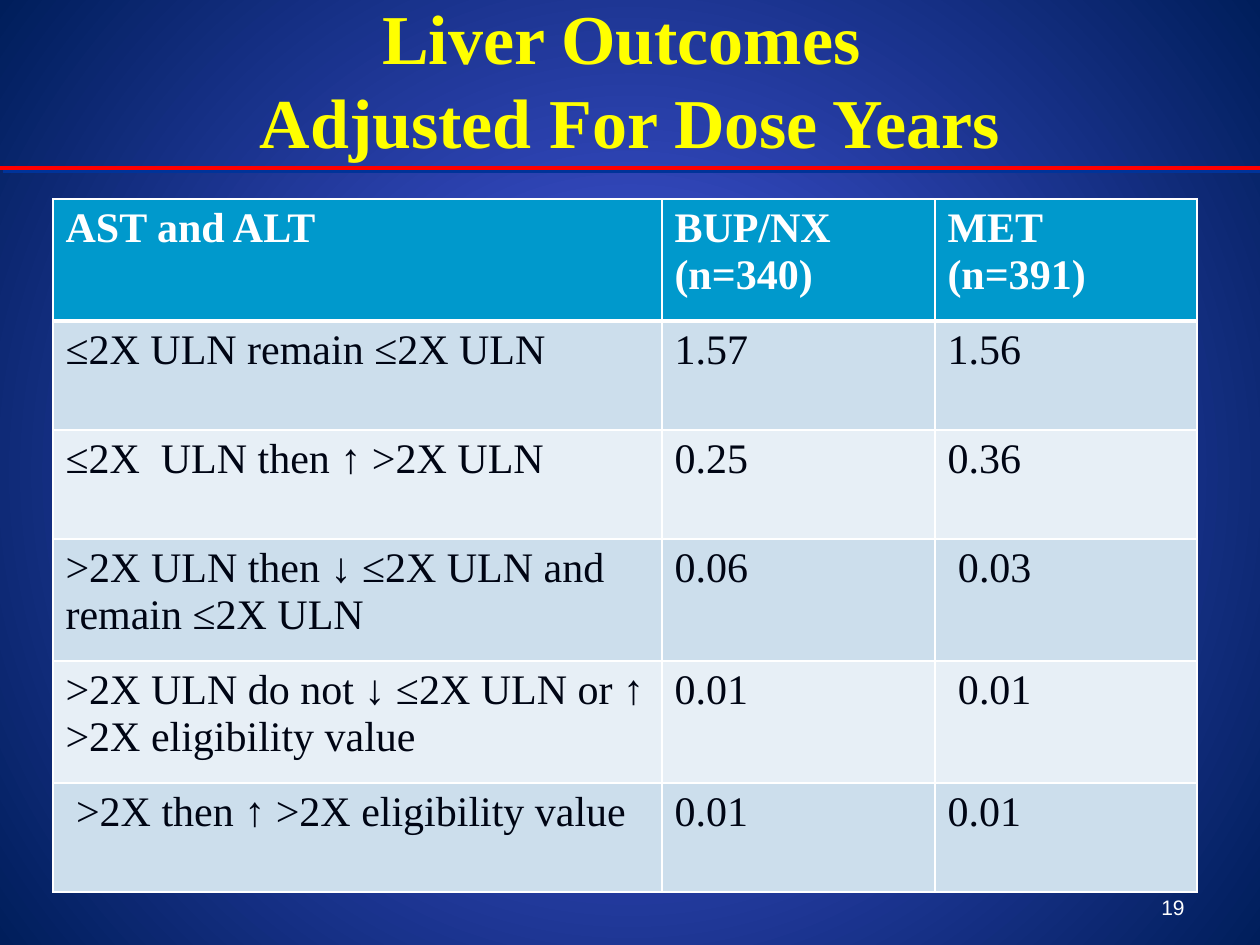
from dataclasses import dataclass

from lxml.etree import SubElement
from pptx import Presentation
from pptx.dml.color import RGBColor as Rgb
from pptx.enum.shapes import MSO_CONNECTOR as Connector
from pptx.enum.text import MSO_ANCHOR as Anchor, MSO_AUTO_SIZE as AutoSize, PP_ALIGN as Align
from pptx.oxml import parse_xml
from pptx.oxml.ns import nsdecls, qn
from pptx.util import Emu, Pt

EMU_PER_PX = 914400 / 126


@dataclass(frozen=True)
class Theme:
    serif: str = "Times New Roman"
    sans: str = "Arial"
    glow: str = "4A5AE9"
    edge: str = "001E5B"
    title: str = "FFFF00"
    white: str = "FFFFFF"
    ink: str = "000514"
    header: str = "0099CC"
    bands: tuple = ("CCDEEC", "E7EFF6")
    rule: str = "FF0000"
    rule_shadow: str = "003399"
    title_size: int = 40
    table_size: int = 24
    number_size: int = 12


THEME = Theme()

OUTCOMES = [
    ("AST and ALT", "BUP/NX (n=340)", "MET (n=391)"),
    ("≤2X ULN remain ≤2X ULN", "1.57", "1.56"),
    ("≤2X  ULN then ↑ >2X ULN", "0.25", "0.36"),
    (">2X ULN then ↓ ≤2X ULN and remain ≤2X ULN", "0.06", " 0.03"),
    (">2X ULN do not ↓ ≤2X ULN or ↑ >2X eligibility value", "0.01", " 0.01"),
    (" >2X then ↑ >2X eligibility value", "0.01", "0.01"),
]
COLUMN_WIDTHS = (609, 273, 262)
ROW_HEIGHTS = (122, 109, 109, 122, 122, 109)


def px(length):
    return Emu(round(length * EMU_PER_PX))


def box(*lengths):
    return [px(length) for length in lengths]


def format_text(frame, font, size, color, bold=False, align=Align.LEFT):
    for paragraph in frame.paragraphs:
        paragraph.alignment = align
        for run in paragraph.runs:
            run.font.name = font
            run.font.size = Pt(size)
            run.font.bold = bold
            run.font.color.rgb = Rgb.from_string(color)


def paint_background(slide):
    fill = slide.background.fill
    fill.solid()
    fill.fore_color.rgb = Rgb.from_string(THEME.edge)
    properties = slide._element.cSld.bg.bgPr
    gradient = parse_xml(
        f'<a:gradFill {nsdecls("a")} rotWithShape="1"><a:gsLst>'
        f'<a:gs pos="0"><a:srgbClr val="{THEME.glow}"/></a:gs>'
        f'<a:gs pos="100000"><a:srgbClr val="{THEME.edge}"/></a:gs></a:gsLst>'
        '<a:path path="circle"><a:fillToRect l="50000" t="50000" r="50000" b="50000"/></a:path>'
        '</a:gradFill>'
    )
    properties.replace(properties.find(qn("a:solidFill")), gradient)


def add_title(slide, wording):
    title = slide.shapes.title
    title.left, title.top, title.width, title.height = box(63, 0, 1134, 158)
    frame = title.text_frame
    frame.text = wording
    frame.auto_size = AutoSize.NONE
    frame.vertical_anchor = Anchor.MIDDLE
    format_text(frame, THEME.serif, THEME.title_size, THEME.title, True, Align.CENTER)


def border_cell(cell, bottom_width):
    properties = cell._tc.get_or_add_tcPr()
    widths = {"a:lnL": 1, "a:lnR": 1, "a:lnT": 1, "a:lnB": bottom_width}
    for position, (side, width) in enumerate(widths.items()):
        properties.insert(position, parse_xml(
            f'<{side} {nsdecls("a")} w="{Pt(width)}"><a:solidFill>'
            f'<a:srgbClr val="{THEME.white}"/></a:solidFill></{side}>'
        ))


def add_outcome_table(slide):
    frame = slide.shapes.add_table(
        len(OUTCOMES), len(COLUMN_WIDTHS),
        *box(53, 199, sum(COLUMN_WIDTHS), sum(ROW_HEIGHTS)),
    )
    table = frame.table
    for column, width in zip(table.columns, COLUMN_WIDTHS):
        column.width = px(width)
    for index, (row, height, wordings) in enumerate(zip(table.rows, ROW_HEIGHTS, OUTCOMES)):
        row.height = px(height)
        heading = index == 0
        band = THEME.header if heading else THEME.bands[(index - 1) % 2]
        ink = THEME.white if heading else THEME.ink
        for cell, wording in zip(row.cells, wordings):
            cell.text_frame.text = wording
            format_text(cell.text_frame, THEME.serif, THEME.table_size, ink, heading)
            cell.fill.solid()
            cell.fill.fore_color.rgb = Rgb.from_string(band)
            border_cell(cell, 3 if heading else 1)


def add_slide_number(slide, number):
    frame = slide.shapes.add_textbox(*box(903, 861, 294, 65)).text_frame
    frame.word_wrap = True
    frame.vertical_anchor = Anchor.BOTTOM
    frame.text = number
    format_text(frame, THEME.sans, THEME.number_size, THEME.white, align=Align.RIGHT)


def add_title_rule(slide):
    rule = slide.shapes.add_connector(Connector.STRAIGHT, *box(0, 168, 1260, 168))
    rule.line.color.rgb = Rgb.from_string(THEME.rule)
    rule.line.width = Pt(2.25)
    effects = SubElement(rule._element.spPr, qn("a:effectLst"))
    shadow = SubElement(effects, qn("a:outerShdw"), dist=str(Pt(2.8)), dir="2700000")
    SubElement(shadow, qn("a:srgbClr"), val=THEME.rule_shadow)


def main():
    deck = Presentation()
    deck.slide_width, deck.slide_height = box(1260, 945)
    slide = deck.slides.add_slide(deck.slide_layouts[5])
    paint_background(slide)
    add_title(slide, "Liver Outcomes \vAdjusted For Dose Years")
    add_outcome_table(slide)
    add_slide_number(slide, "19")
    add_title_rule(slide)
    deck.save("out.pptx")


if __name__ == "__main__":
    main()
